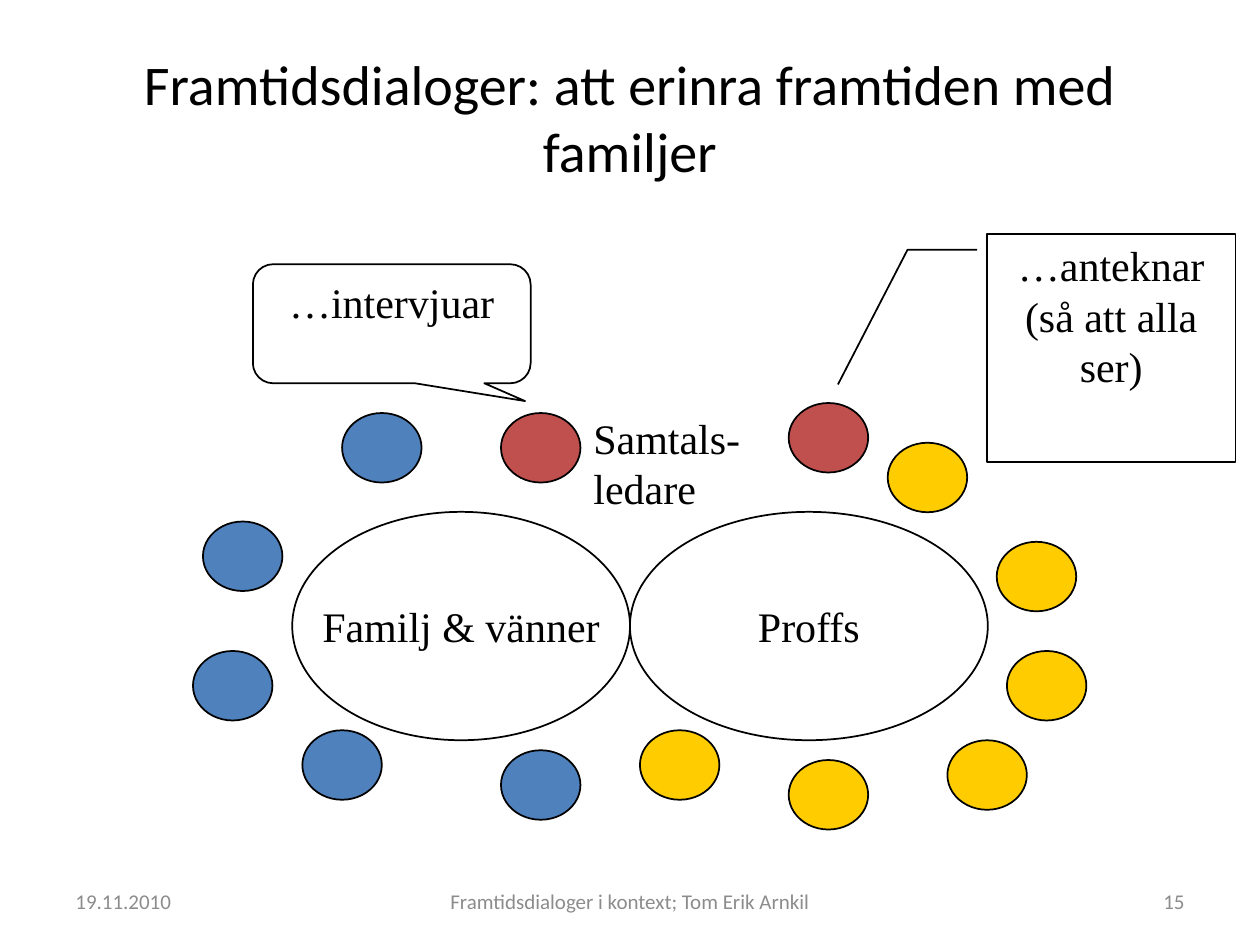
from pptx import Presentation
from pptx.dml.color import RGBColor
from pptx.enum.shapes import MSO_SHAPE
from pptx.enum.text import MSO_ANCHOR, PP_ALIGN
from pptx.util import Pt

OVAL = MSO_SHAPE.OVAL
NOTE_CALLOUT = MSO_SHAPE.LINE_CALLOUT_2
SPEECH_CALLOUT = MSO_SHAPE.ROUNDED_RECTANGULAR_CALLOUT
LEFT, CENTER, RIGHT = PP_ALIGN.LEFT, PP_ALIGN.CENTER, PP_ALIGN.RIGHT
TOP, MIDDLE = MSO_ANCHOR.TOP, MSO_ANCHOR.MIDDLE

BLACK = RGBColor(0x00, 0x00, 0x00)
GREY = RGBColor(0x8C, 0x8C, 0x8C)
BLUE = RGBColor(0x4F, 0x81, 0xBD)
RED = RGBColor(0xC0, 0x50, 0x4D)
YELLOW = RGBColor(0xFF, 0xCC, 0x00)

TITLE_FONT = {"name": "Calibri", "size": Pt(32), "color": BLACK}
BODY_FONT = {"name": "Times New Roman", "size": Pt(24), "color": BLACK}
FOOTER_FONT = {"name": "Calibri", "size": Pt(12), "color": GREY}

# Content: boxes are (left, top, width, height) in points
TITLE = "Framtidsdialoger: att erinra framtiden med familjer"
TITLE_BOX = (36, 21.6, 648, 90)

GROUPS = [
    ("Familj & vänner", (167, 292.5, 193, 130.5)),
    ("Proffs", (360, 292.5, 204.5, 130.5)),
]

# Participants: colour and the top left corner of each seat
SEAT_SIZE = (45.4, 39.7)
SEATS = {
    BLUE: [(116, 298), (110.3, 372), (172.8, 417.3), (195.5, 236), (286.3, 428.7)],
    RED: [(286.3, 236), (450.7, 230.3)],
    YELLOW: [(507.3, 253), (569.6, 309.6), (575.4, 372), (541.4, 423),
             (450.7, 434.3), (365.7, 417.3)],
}

CALLOUTS = [
    ("…anteknar (så att alla ser)", NOTE_CALLOUT, (564, 133.6, 142, 130.5),
     (0.07, -0.04, 0.07, -0.32, 0.66, -0.6)),
    ("…intervjuar", SPEECH_CALLOUT, (144.5, 151, 158.7, 68), (0.48, 0.65, 0.17)),
]

LEADER_LABEL = ["Samtals-", "ledare"]
LEADER_BOX = (332, 232, 99, 65.5)

FOOTER_TOP, FOOTER_HEIGHT = 500.5, 28.8
FOOTERS = [
    ("19.11.2010", 36, 168, LEFT),
    ("15", 516, 168, RIGHT),
    ("Framtidsdialoger i kontext; Tom Erik Arnkil", 246, 228, CENTER),
]


def points(values):
    return [Pt(value) for value in values]


def write(shape, lines, font, align=CENTER, anchor=MIDDLE, wrap=True):
    frame = shape.text_frame
    frame.text = "\n".join(lines)
    frame.word_wrap = wrap
    frame.vertical_anchor = anchor
    for paragraph in frame.paragraphs:
        paragraph.alignment = align
        for key, value in font.items():
            if key == "color":
                paragraph.font.color.rgb = value
            else:
                setattr(paragraph.font, key, value)


def add_outlined(slide, kind, box, fill=None):
    shape = slide.shapes.add_shape(kind, *points(box))
    shape.shadow.inherit = False
    if fill is None:
        shape.fill.background()
    else:
        shape.fill.solid()
        shape.fill.fore_color.rgb = fill
    shape.line.color.rgb = BLACK
    shape.line.width = Pt(1)
    return shape


def add_label(slide, box, lines, font, **layout):
    write(slide.shapes.add_textbox(*points(box)), lines, font, **layout)


def main():
    presentation = Presentation()
    presentation.slide_width, presentation.slide_height = Pt(720), Pt(540)
    slide = presentation.slides.add_slide(presentation.slide_layouts[5])

    # Title
    title = slide.shapes.title
    title.left, title.top, title.width, title.height = points(TITLE_BOX)
    write(title, [TITLE], TITLE_FONT)

    # The two tables
    for name, box in GROUPS:
        write(add_outlined(slide, OVAL, box), [name], BODY_FONT, wrap=False)

    # Seats around the tables
    for color, corners in SEATS.items():
        for corner in corners:
            add_outlined(slide, OVAL, corner + SEAT_SIZE, color)

    # Callouts and label of the dialogue leaders
    for text, kind, box, adjustments in CALLOUTS:
        callout = add_outlined(slide, kind, box)
        for index, value in enumerate(adjustments):
            callout.adjustments[index] = value
        write(callout, [text], BODY_FONT, anchor=TOP)
    add_label(slide, LEADER_BOX, LEADER_LABEL, BODY_FONT,
              align=LEFT, anchor=TOP, wrap=False)

    # Footer
    for text, left, width, align in FOOTERS:
        add_label(slide, (left, FOOTER_TOP, width, FOOTER_HEIGHT), [text],
                  FOOTER_FONT, align=align)

    presentation.save("out.pptx")


if __name__ == "__main__":
    main()
